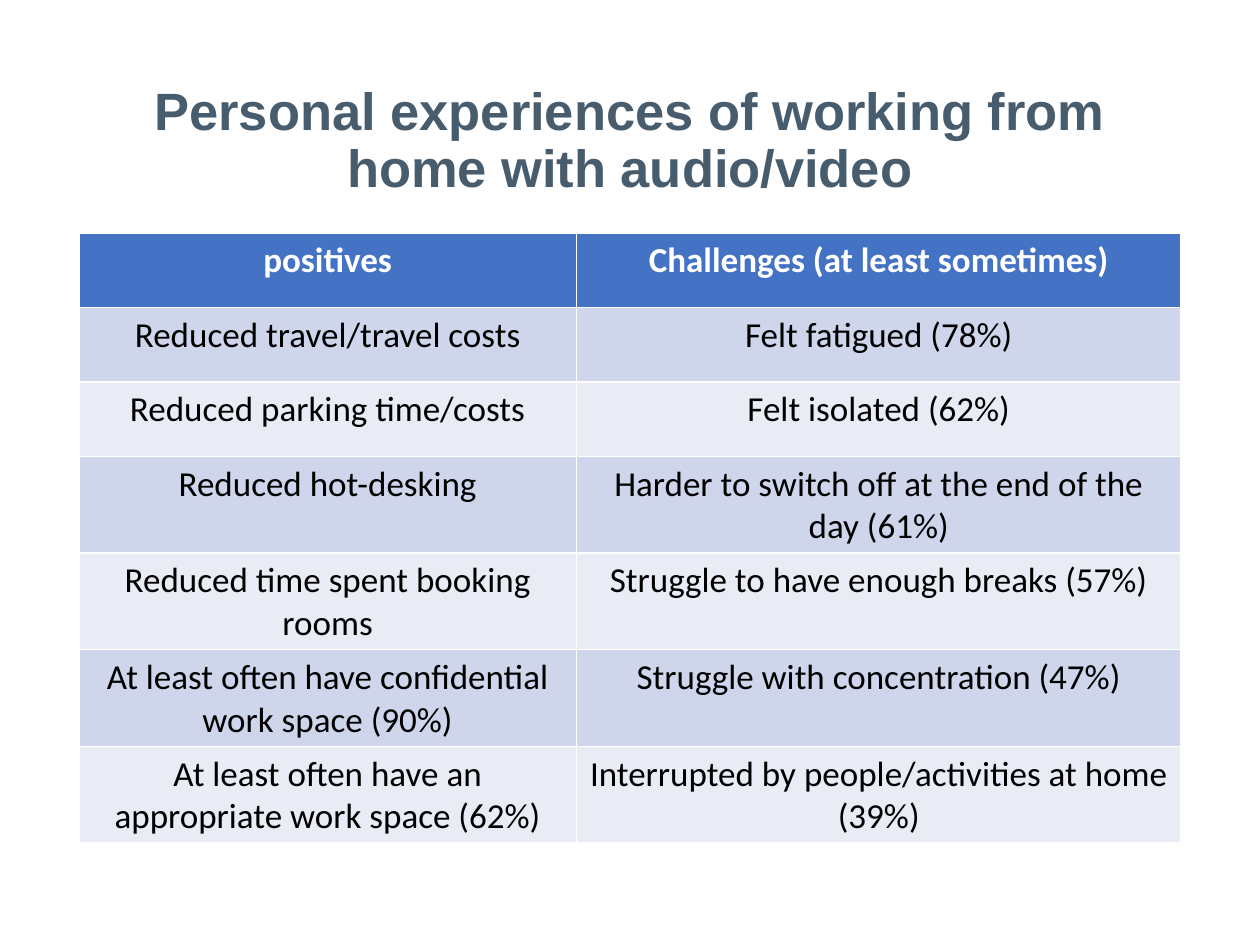
from pptx import Presentation, util as u
from pptx.dml.color import RGBColor
from pptx.enum import text

COLOURS = {
    "title": "475C6D",
    "header": "4472C4",
    "header text": "FFFFFF",
    "body text": "000000",
    "odd row": "CFD5EA",
    "even row": "E9EBF5",
}

EXPERIENCES = [
    ("positives", "Challenges (at least sometimes)"),
    ("Reduced travel/travel costs", "Felt fatigued (78%)"),
    ("Reduced parking time/costs", "Felt isolated (62%)"),
    ("Reduced hot-desking", "Harder to switch off at the end of the day (61%)"),
    ("Reduced time spent booking rooms", "Struggle to have enough breaks (57%)"),
    ("At least often have confidential work space (90%)", "Struggle with concentration (47%)"),
    ("At least often have an appropriate work space (62%)", "Interrupted by people/activities at home (39%)"),
]


class SlideBuilder:
    title_font = "Arial"
    table_font = "Calibri"

    def __init__(self, slide):
        self.slide = slide

    def centred_text(self, frame, words, font, size, colour, bold):
        """Put one centred paragraph into a text frame."""
        paragraph = frame.paragraphs[0]
        paragraph.text = words
        paragraph.alignment = text.PP_ALIGN.CENTER
        paragraph.font.name = font
        paragraph.font.size = u.Pt(size)
        paragraph.font.bold = bold
        paragraph.font.color.rgb = RGBColor.from_string(COLOURS[colour])
        return paragraph

    def title(self, words, left, top, width, height):
        box = self.slide.shapes.add_textbox(u.Cm(left), u.Cm(top), u.Cm(width), u.Cm(height))
        frame = box.text_frame
        frame.word_wrap = True
        frame.vertical_anchor = text.MSO_ANCHOR.MIDDLE
        paragraph = self.centred_text(frame, words, self.title_font, 30, "title", True)
        paragraph.line_spacing = 0.9

    def table(self, rows, left, top, column_widths, row_height):
        # The default table style supplies the white rules
        table = self.slide.shapes.add_table(
            len(rows), len(column_widths), u.Cm(left), u.Cm(top),
            u.Cm(sum(column_widths)), u.Cm(row_height * len(rows))).table
        for column, width in zip(table.columns, column_widths):
            column.width = u.Cm(width)
        for i, row in enumerate(rows):
            table.rows[i].height = u.Cm(row_height)
            header = i == 0
            fill = "header" if header else "odd row" if i % 2 else "even row"
            colour = "header text" if header else "body text"
            for j, words in enumerate(row):
                cell = table.cell(i, j)
                cell.fill.solid()
                cell.fill.fore_color.rgb = RGBColor.from_string(COLOURS[fill])
                self.centred_text(cell.text_frame, words, self.table_font, 20, colour, header)


def main():
    presentation = Presentation()
    presentation.slide_width, presentation.slide_height = u.Cm(25.4), u.Cm(19.05)
    builder = SlideBuilder(presentation.slides.add_slide(presentation.slide_layouts[6]))

    # Heading
    builder.title("Personal experiences of working from home with audio/video",
                  1.75, 1.02, 21.9, 3.68)

    # Positives beside challenges
    builder.table(EXPERIENCES, 1.59, 4.7, (10.03, 12.19), 1.5)

    presentation.save("out.pptx")


if __name__ == "__main__":
    main()
